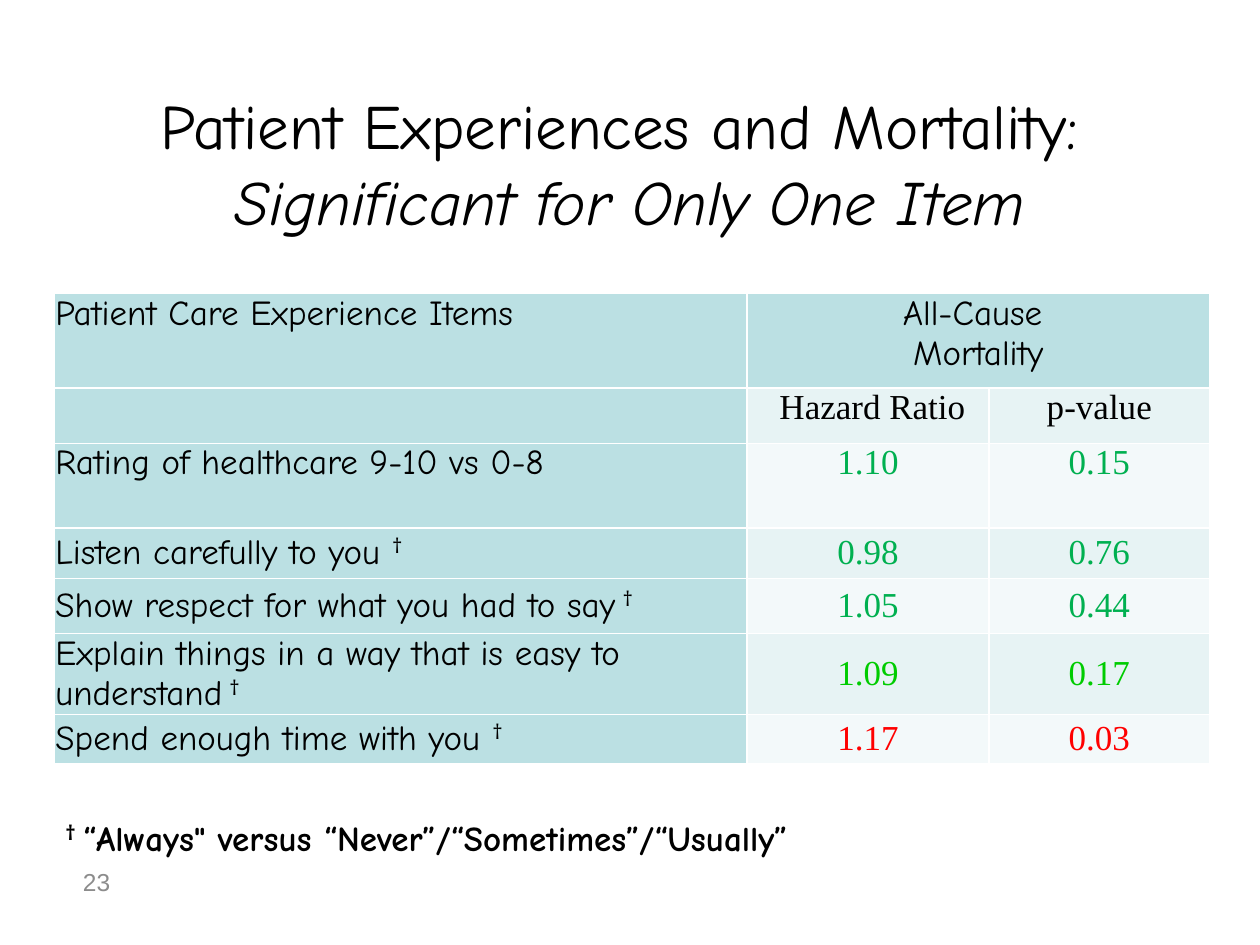
from pptx import Presentation
from pptx.dml.color import RGBColor
from pptx.enum.text import MSO_ANCHOR, PP_ALIGN
from pptx.util import Inches, Pt

BLACK = RGBColor(0x00, 0x00, 0x00)
GRAY = RGBColor(0x8C, 0x8C, 0x8C)
GREEN = RGBColor(0x00, 0xB0, 0x50)
BRIGHT_GREEN = RGBColor(0x00, 0xCC, 0x00)
RED = RGBColor(0xFF, 0x00, 0x00)
TEAL = RGBColor(0xBB, 0xE0, 0xE3)
BAND_DARK = RGBColor(0xE7, 0xF3, 0xF4)
BAND_LIGHT = RGBColor(0xF3, 0xF9, 0xFA)

COLUMN_WIDTHS = [5.5, 1.92, 1.75]
ROW_HEIGHTS = [0.75, 0.44, 0.67, 0.4, 0.44, 0.39, 0.39]
ITEMS = [
    ("Rating of healthcare 9-10 vs 0-8", "", "1.10", "0.15", GREEN),
    ("Listen carefully to you ", "†", "0.98", "0.76", GREEN),
    ("Show respect for what you had to say", " †", "1.05", "0.44", GREEN),
    ("Explain things in a way that is easy to understand", " †", "1.09", "0.17", BRIGHT_GREEN),
    ("Spend enough time with you ", "†", "1.17", "0.03", RED),
]


def add_text(paragraph, text, font="Comic Neue", size=20, color=BLACK,
             bold=False, italic=False, superscript=False):
    run = paragraph.add_run()
    run.text = text
    run.font.name = font
    run.font.size = Pt(size)
    run.font.color.rgb = color
    run.font.bold = bold
    run.font.italic = italic
    if superscript:
        run.font._element.set("baseline", "30000")


class SlideBuilder:
    heading_font = "Comic Neue"
    value_font = "Times New Roman"
    number_font = "Arial"

    def __init__(self, presentation):
        self.slide = presentation.slides.add_slide(presentation.slide_layouts[5])

    def title(self, first_line, second_line, left, top, width, height):
        shape = self.slide.shapes.title
        shape.left, shape.top = Inches(left), Inches(top)
        shape.width, shape.height = Inches(width), Inches(height)
        shape.text_frame.vertical_anchor = MSO_ANCHOR.MIDDLE
        paragraph = shape.text_frame.paragraphs[0]
        paragraph.alignment = PP_ALIGN.CENTER
        add_text(paragraph, first_line, font=self.heading_font, size=36)
        paragraph.add_line_break()
        add_text(paragraph, second_line, font=self.heading_font, size=36, italic=True)

    def text_box(self, left, top, width, height):
        shape = self.slide.shapes.add_textbox(
            Inches(left), Inches(top), Inches(width), Inches(height))
        shape.text_frame.word_wrap = True
        return shape.text_frame.paragraphs[0]

    def table(self, left, top, column_widths, row_heights):
        frame = self.slide.shapes.add_table(
            len(row_heights), len(column_widths), Inches(left), Inches(top),
            Inches(sum(column_widths)), Inches(sum(row_heights)))
        table = frame.table
        for column, width in zip(table.columns, column_widths):
            column.width = Inches(width)
        for row_index, (row, height) in enumerate(zip(table.rows, row_heights)):
            row.height = Inches(height)
            band = BAND_DARK if row_index % 2 else BAND_LIGHT
            for column_index, cell in enumerate(row.cells):
                cell.fill.solid()
                heading = row_index == 0 or column_index == 0
                cell.fill.fore_color.rgb = TEAL if heading else band
                cell.margin_left = cell.margin_right = Inches(0.01)
                cell.margin_top = cell.margin_bottom = 0
                if row_index > 2:
                    cell.vertical_anchor = MSO_ANCHOR.MIDDLE
        return table

    def centered(self, paragraph, text, **text_format):
        paragraph.alignment = PP_ALIGN.CENTER
        add_text(paragraph, text, **text_format)

    def mortality_table(self, left, top):
        table = self.table(left, top, COLUMN_WIDTHS, ROW_HEIGHTS)
        add_text(table.cell(0, 0).text_frame.paragraphs[0], "Patient Care Experience Items")
        outcome = table.cell(0, 1)
        outcome.merge(table.cell(0, 2))
        self.centered(outcome.text_frame.paragraphs[0], "All-Cause ")
        self.centered(outcome.text_frame.add_paragraph(), "Mortality")
        for column, heading in enumerate([" Hazard Ratio", "p-value"], 1):
            self.centered(table.cell(1, column).text_frame.paragraphs[0],
                          heading, font=self.value_font)
        for row, (item, mark, ratio, p_value, color) in enumerate(ITEMS, 2):
            label = table.cell(row, 0).text_frame.paragraphs[0]
            add_text(label, item)
            if mark:
                add_text(label, mark, superscript=True)
            for column, value in enumerate([ratio, p_value], 1):
                self.centered(table.cell(row, column).text_frame.paragraphs[0],
                              value, font=self.value_font, color=color)

    def footnote(self, mark, text, left, top, width, height):
        paragraph = self.text_box(left, top, width, height)
        add_text(paragraph, mark, bold=True, superscript=True)
        add_text(paragraph, text, bold=True)

    def page_number(self, number, left, top, width, height):
        paragraph = self.text_box(left, top, width, height)
        add_text(paragraph, number, font=self.number_font, size=14, color=GRAY)


def main():
    presentation = Presentation()
    presentation.slide_width = Inches(10)
    presentation.slide_height = Inches(7.5)
    builder = SlideBuilder(presentation)
    builder.title("Patient Experiences and Mortality: ",
                  "Significant for Only One Item", 0, 0.75, 10, 1.08)
    builder.mortality_table(0.43, 2.33)
    builder.footnote("† ", "“Always\" versus “Never”/“Sometimes”/“Usually”",
                     0.42, 6.43, 9, 0.44)
    builder.page_number("23", 0.56, 6.83, 2.62, 0.52)
    presentation.save("out.pptx")


if __name__ == "__main__":
    main()
